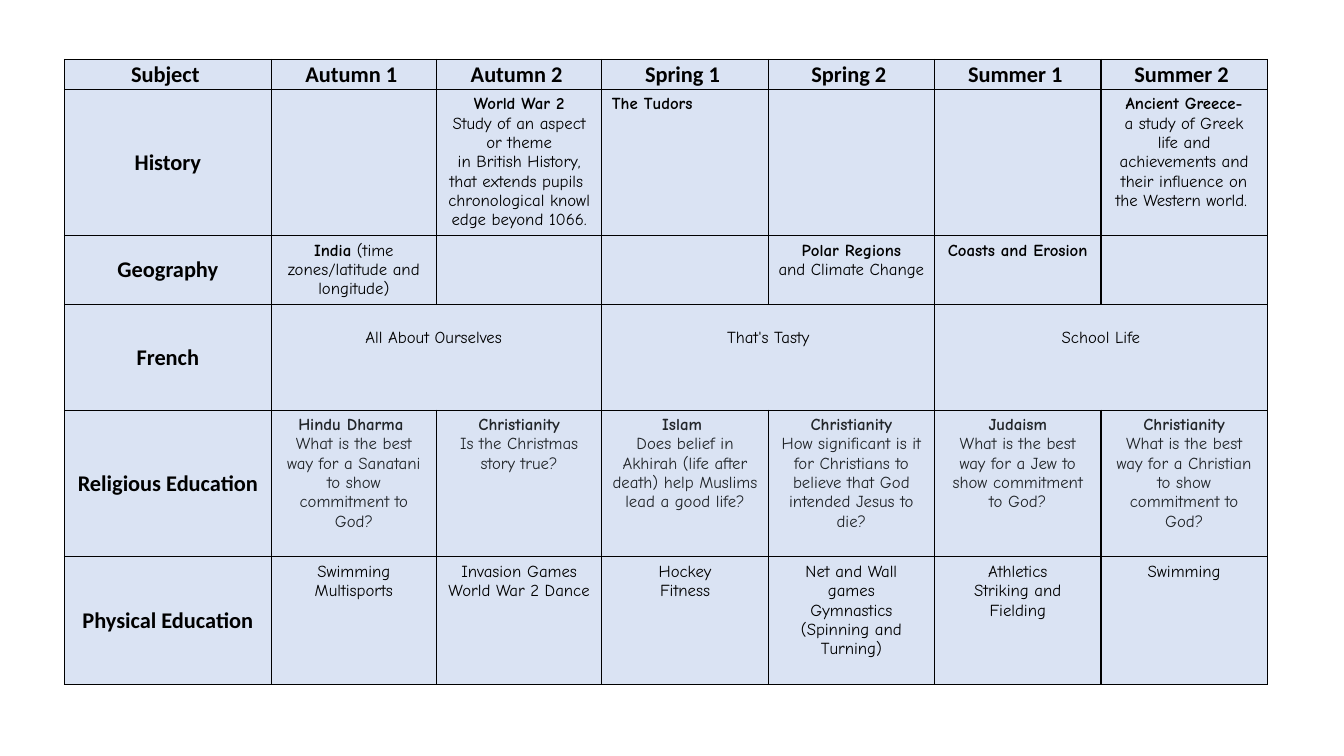
from collections import namedtuple
from lxml import etree
from pptx import Presentation
from pptx import util as u
from pptx.dml import color
from pptx.enum import text
from pptx.oxml import ns

Theme = namedtuple("Theme", "fill ink slate label_font body_font label_size body_size border")
theme = Theme(color.RGBColor.from_string("DAE3F3"), color.RGBColor.from_string("000000"),
              color.RGBColor.from_string("212529"), "Calibri", "Comic Neue", u.Pt(16), u.Pt(12), u.Pt(1))

hard_space = chr(160)
headings = ["Subject~", "Autumn 1~", "Autumn 2~", "Spring 1~", "Spring 2~", "Summer 1~", "Summer 2~"]
subjects = ["History", "Geography", "French", "Religious Education", "Physical Education"]
col_widths = [2.05, 1.64, 1.64, 1.65, 1.65, 1.65, 1.65]
row_heights = [0.3, 1.45, 0.68, 1.05, 1.45, 1.27]
margins = [(0.03, 0.01)] + [(0.1, 0.05)] * 4 + [(0.11, 0.06)]

topics = {
    ("History", 2): [("World War 2", ""),
                     ("", "Study of an aspect or~theme in~British~History, that~extends~pupils~"
                          "chronological~knowledge~beyond~1066.")],
    ("History", 3): [("The Tudors", "")],
    ("History", 6): [("Ancient Greece-", " a~study of Greek life~and achievements~and their influence~"
                                         "on the Western~world.~")],
    ("Geography", 1): [("India", " (time zones/latitude and longitude)")],
    ("Geography", 4): [("Polar Regions", " and~Climate Change")],
    ("Geography", 5): [("Coasts and Erosion", "")],
    ("French", 1): [("", "All About Ourselves~")],
    ("French", 3): [("", "That's Tasty")],
    ("French", 5): [("", "School Life")],
    ("Religious Education", 1): [("Hindu Dharma~", ""),
                                 ("", "What is the best way for a Sanatani to show commitment to God?")],
    ("Religious Education", 2): [("Christianity", ""), ("", "Is the Christmas story true?")],
    ("Religious Education", 3): [("Islam~", ""),
                                 ("", "Does belief in Akhirah (life after death) help Muslims lead a good life?")],
    ("Religious Education", 4): [("Christianity", ""),
                                 ("", "How significant is it for Christians to believe that God intended "
                                      "Jesus to die?")],
    ("Religious Education", 5): [("Judaism", ""),
                                 ("", "What is the best way for a Jew to show commitment to God?")],
    ("Religious Education", 6): [("Christianity", ""),
                                 ("", "What is the best way for a Christian to show commitment to God?")],
    ("Physical Education", 1): [("", "Swimming"), ("", "Multisports")],
    ("Physical Education", 2): [("", "Invasion Games"), ("", "World War 2 Dance")],
    ("Physical Education", 3): [("", "Hockey"), ("", "Fitness")],
    ("Physical Education", 4): [("", "Net and Wall games"), ("", "Gymnastics (Spinning and Turning)")],
    ("Physical Education", 5): [("", "Athletics"), ("", "Striking and Fielding")],
    ("Physical Education", 6): [("", "Swimming")],
}


def style_cell(cell, margin):
    cell.margin_left = cell.margin_right = u.Inches(margin[0])
    cell.margin_top = cell.margin_bottom = u.Inches(margin[1])
    tc_pr = cell._tc.get_or_add_tcPr()
    for side in ("a:lnL", "a:lnR", "a:lnT", "a:lnB"):
        line = etree.SubElement(tc_pr, ns.qn(side), w=str(int(theme.border)))
        solid = etree.SubElement(line, ns.qn("a:solidFill"))
        etree.SubElement(solid, ns.qn("a:srgbClr"), val=str(theme.ink))
    cell.fill.solid()
    cell.fill.fore_color.rgb = theme.fill


def write(cell, paragraphs, font, size, ink):
    tf = cell.text_frame
    for i, pair in enumerate(paragraphs):
        p = tf.paragraphs[0] if i == 0 else tf.add_paragraph()
        p.alignment = text.PP_ALIGN.CENTER
        for words, bold in zip(pair, (True, False)):
            if words:
                r = p.add_run()
                r.text = words.replace("~", hard_space)
                r.font.name, r.font.size, r.font.bold = font, size, bold
                r.font.color.rgb = ink


prs = Presentation()
prs.slide_width, prs.slide_height = u.Inches(13.33), u.Inches(7.5)
s = prs.slides.add_slide(prs.slide_layouts[6])
table = s.shapes.add_table(len(row_heights), len(col_widths), u.Inches(0.64), u.Inches(0.59),
                           u.Inches(sum(col_widths)), u.Inches(sum(row_heights))).table
table.first_row = table.horz_banding = False
for column, width in zip(table.columns, col_widths):
    column.width = u.Inches(width)
for row, height in zip(table.rows, row_heights):
    row.height = u.Inches(height)

labels = ["Subject"] + subjects
for row, subject in enumerate(labels):
    for col, heading in enumerate(headings):
        cell = table.cell(row, col)
        style_cell(cell, margins[row])
        if row == 0 or col == 0:
            cell.vertical_anchor = text.MSO_ANCHOR.MIDDLE
            write(cell, [(heading if row == 0 else subject, "")],
                  theme.label_font, theme.label_size, theme.ink)
        elif (subject, col) in topics:
            ink = theme.slate if subject == "Religious Education" else theme.ink
            write(cell, topics[subject, col], theme.body_font, theme.body_size, ink)

table.cell(labels.index("History"), 3).text_frame.paragraphs[0].alignment = text.PP_ALIGN.LEFT
french = labels.index("French")
for col in (1, 3, 5):
    term = table.cell(french, col)
    term.merge(table.cell(french, col + 1))
    term.margin_top = u.Inches(0.24)

prs.save("out.pptx")
